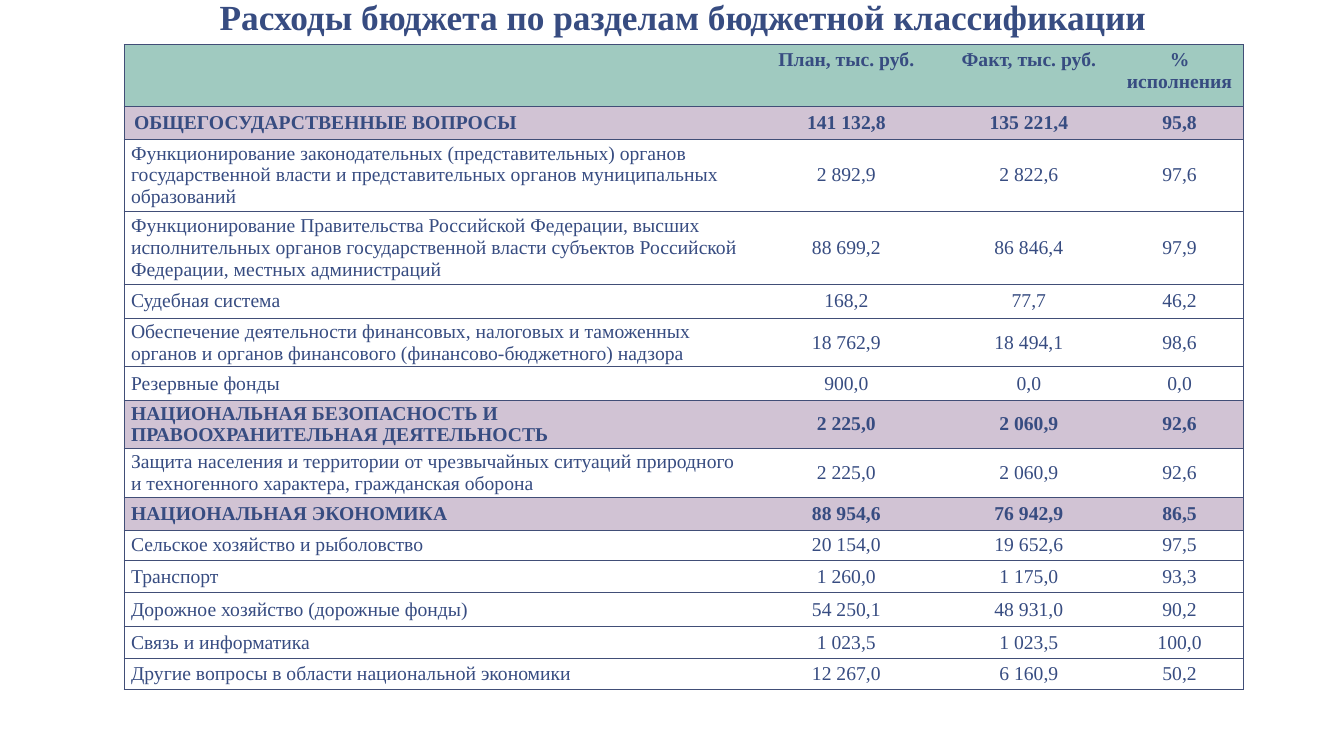
from dataclasses import dataclass

from lxml.etree import SubElement
from pptx import Presentation
from pptx.dml.color import RGBColor
from pptx.enum.text import MSO_ANCHOR, PP_ALIGN
from pptx.oxml.ns import qn
from pptx.slide import Slide
from pptx.table import _Cell
from pptx.text.text import _Paragraph
from pptx.util import Inches, Pt


@dataclass(frozen=True)
class Theme:
    font: str = "Times New Roman"
    text: str = "374C81"
    border: str = "414E77"
    header_fill: str = "A0CAC0"
    section_fill: str = "D1C3D4"
    title_size: float = 25.2
    table_size: float = 14
    border_width: float = 0.5


@dataclass(frozen=True)
class BudgetRow:
    height: float
    values: tuple[str, str, str, str]
    fill: str | None = None
    inset: float = 0.07
    header: bool = False


THEME = Theme()
TITLE = "Расходы бюджета по разделам бюджетной классификации"
COLUMN_WIDTHS = (6.22, 1.89, 1.73, 1.26)
ROWS = (
    BudgetRow(0.61, ("", "План, тыс. руб.", "Факт, тыс. руб.", "% исполнения"),
              THEME.header_fill, header=True),
    BudgetRow(0.33, ("ОБЩЕГОСУДАРСТВЕННЫЕ ВОПРОСЫ", "141 132,8", "135 221,4", "95,8"),
              THEME.section_fill, inset=0.1),
    BudgetRow(0.72, ("Функционирование законодательных (представительных) органов "
                     "государственной власти и представительных органов муниципальных "
                     "образований", "2 892,9", "2 822,6", "97,6")),
    BudgetRow(0.72, ("Функционирование Правительства Российской Федерации, высших "
                     "исполнительных органов государственной власти субъектов Российской "
                     "Федерации, местных администраций", "88 699,2", "86 846,4", "97,9")),
    BudgetRow(0.34, ("Судебная система", "168,2", "77,7", "46,2")),
    BudgetRow(0.48, ("Обеспечение деятельности финансовых, налоговых и таможенных "
                     "органов и органов финансового (финансово-бюджетного) надзора",
                     "18 762,9", "18 494,1", "98,6")),
    BudgetRow(0.33, ("Резервные фонды", "900,0", "0,0", "0,0")),
    BudgetRow(0.48, ("НАЦИОНАЛЬНАЯ БЕЗОПАСНОСТЬ И ПРАВООХРАНИТЕЛЬНАЯ ДЕЯТЕЛЬНОСТЬ",
                     "2 225,0", "2 060,9", "92,6"), THEME.section_fill),
    BudgetRow(0.48, ("Защита населения и территории от чрезвычайных ситуаций природного "
                     "и техногенного характера, гражданская оборона",
                     "2 225,0", "2 060,9", "92,6")),
    BudgetRow(0.33, ("НАЦИОНАЛЬНАЯ ЭКОНОМИКА", "88 954,6", "76 942,9", "86,5"),
              THEME.section_fill),
    BudgetRow(0.3, ("Сельское хозяйство и рыболовство", "20 154,0", "19 652,6", "97,5")),
    BudgetRow(0.32, ("Транспорт", "1 260,0", "1 175,0", "93,3")),
    BudgetRow(0.34, ("Дорожное хозяйство (дорожные фонды)", "54 250,1", "48 931,0", "90,2")),
    BudgetRow(0.31, ("Связь и информатика", "1 023,5", "1 023,5", "100,0")),
    BudgetRow(0.31, ("Другие вопросы в области национальной экономики",
                     "12 267,0", "6 160,9", "50,2")),
)


def style_text(para: _Paragraph, size: float, bold: bool, align: PP_ALIGN) -> None:
    para.alignment = align
    para.font.name = THEME.font
    para.font.size = Pt(size)
    para.font.bold = bold
    para.font.color.rgb = RGBColor.from_string(THEME.text)
    for span in para.runs:
        span.font.name = THEME.font
        span.font.size = Pt(size)
        span.font.bold = bold
        span.font.color.rgb = RGBColor.from_string(THEME.text)


def set_borders(cell: _Cell, column: int) -> None:
    properties = cell._tc.get_or_add_tcPr()
    visible = {"L": column == 0, "R": column == len(COLUMN_WIDTHS) - 1, "T": True, "B": True}
    for side, shown in visible.items():
        line = SubElement(properties, qn(f"a:ln{side}"), w=str(Pt(THEME.border_width)))
        if shown:
            fill = SubElement(line, qn("a:solidFill"))
            SubElement(fill, qn("a:srgbClr"), val=THEME.border)
        else:
            SubElement(line, qn("a:noFill"))


def fill_cell(cell: _Cell, row: BudgetRow, column: int) -> None:
    cell.text_frame.text = row.values[column]
    align = PP_ALIGN.LEFT if column == 0 else PP_ALIGN.CENTER
    style_text(cell.text_frame.paragraphs[0], THEME.table_size, row.fill is not None, align)
    cell.vertical_anchor = MSO_ANCHOR.TOP if row.header else MSO_ANCHOR.MIDDLE
    cell.margin_left = cell.margin_right = Inches(row.inset)
    cell.margin_top = cell.margin_bottom = Inches(0.05 if row.header else 0)
    set_borders(cell, column)
    if row.fill:
        cell.fill.solid()
        cell.fill.fore_color.rgb = RGBColor.from_string(row.fill)
    else:
        cell.fill.background()


def add_title(page: Slide) -> None:
    box = page.shapes.add_textbox(Inches(1.22), Inches(0.08), Inches(11.11), Inches(0.36))
    frame = box.text_frame
    frame.word_wrap = True
    frame.vertical_anchor = MSO_ANCHOR.BOTTOM
    frame.margin_left = frame.margin_right = Inches(0.13)
    frame.margin_top = frame.margin_bottom = Inches(0.07)
    frame.text = TITLE
    para = frame.paragraphs[0]
    para.line_spacing = 0.85
    style_text(para, THEME.title_size, True, PP_ALIGN.CENTER)


def add_budget_table(page: Slide) -> None:
    height = sum(row.height for row in ROWS)
    table = page.shapes.add_table(
        len(ROWS), len(COLUMN_WIDTHS), Inches(1.23), Inches(0.44),
        Inches(sum(COLUMN_WIDTHS)), Inches(height),
    ).table
    table.first_row = False
    table.horz_banding = False
    for column, width in enumerate(COLUMN_WIDTHS):
        table.columns[column].width = Inches(width)
    for index, row in enumerate(ROWS):
        table.rows[index].height = Inches(row.height)
        for column in range(len(COLUMN_WIDTHS)):
            fill_cell(table.cell(index, column), row, column)


def main() -> None:
    deck = Presentation()
    deck.slide_width = Inches(13.33)
    deck.slide_height = Inches(7.5)
    page = deck.slides.add_slide(deck.slide_layouts[6])
    add_title(page)
    add_budget_table(page)
    deck.save("out.pptx")


if __name__ == "__main__":
    main()
